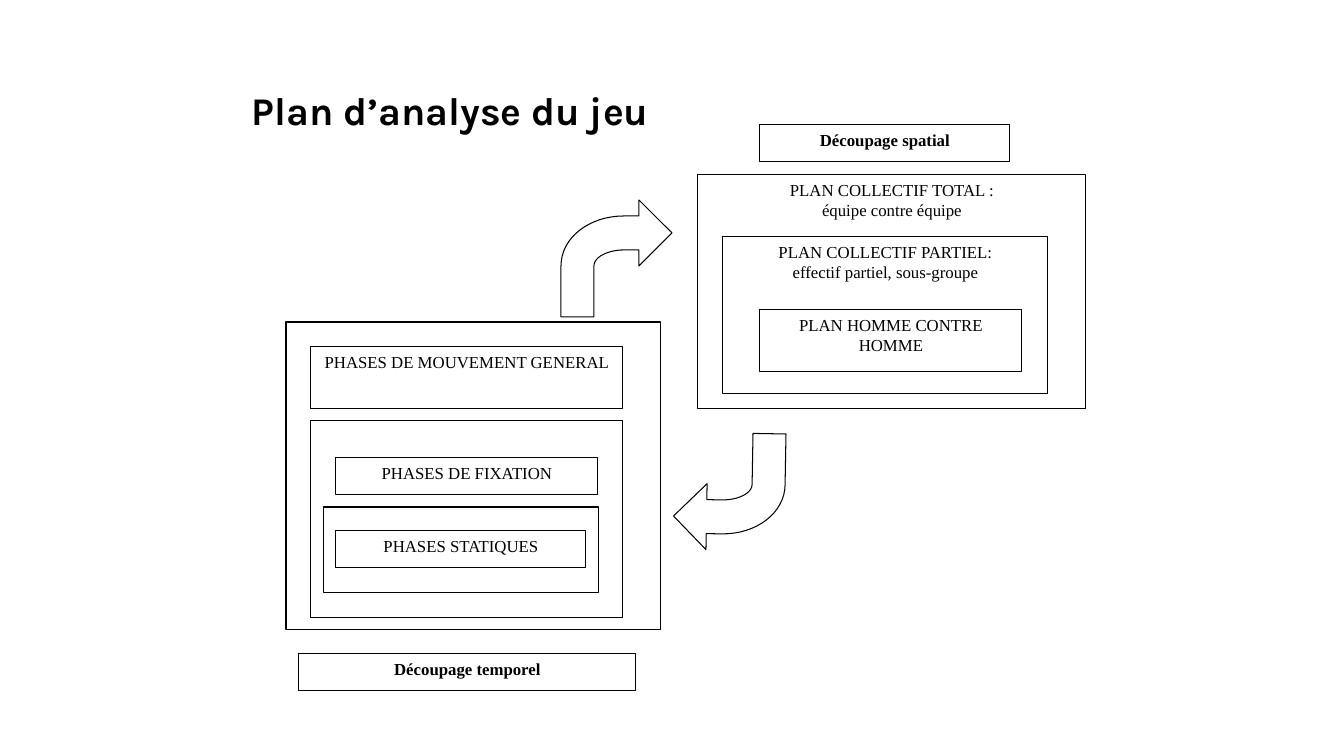
import pptx
import pptx.dml.color
import pptx.enum.shapes
import pptx.enum.text
import pptx.util

BLACK = pptx.dml.color.RGBColor(0, 0, 0)
WHITE = pptx.dml.color.RGBColor(255, 255, 255)
PX = 914400 / 100.8
CURVE_STEPS = 16


def emu(px):
    return pptx.util.Emu(round(px * PX))


def curve(start, control1, control2, end):
    """Points along a cubic Bezier curve, both ends included."""
    points = []
    for step in range(CURVE_STEPS + 1):
        t = step / CURVE_STEPS
        u = 1 - t
        points.append(tuple(
            u**3 * a + 3 * u * u * t * b + 3 * u * t * t * c + t**3 * d
            for a, b, c, d in zip(start, control1, control2, end)))
    return points


BENT_ARROW = [
    (111, 33), (78, 0), (78, 16),
    *curve((63, 16), (28, 16), (0, 38), (0, 66)),
    (0, 117), (33, 117),
    *curve((33, 66), (33, 57), (47, 50), (63, 50)),
    (78, 50), (78, 66),
]


class Diagram:
    body_font = "Times New Roman"
    title_font = "Karla"
    body_size = 12
    title_size = 28
    line_width = 0.75

    def __init__(self, slide):
        self.slide = slide
        fill = slide.background.fill
        fill.solid()
        fill.fore_color.rgb = WHITE

    def outline(self, shape):
        shape.shadow.inherit = False
        shape.fill.background()
        shape.line.color.rgb = BLACK
        shape.line.width = pptx.util.Pt(self.line_width)

    def styled_run(self, paragraph, text, font, size, bold):
        run = paragraph.add_run()
        run.text = text
        run.font.name = font
        run.font.size = pptx.util.Pt(size)
        run.font.bold = bold
        run.font.color.rgb = BLACK

    def title(self, left, top, width, height, text):
        heading = self.slide.shapes.add_textbox(*map(emu, (left, top, width, height)))
        frame = heading.text_frame
        frame.word_wrap = True
        frame.auto_size = pptx.enum.text.MSO_AUTO_SIZE.SHAPE_TO_FIT_TEXT
        self.styled_run(frame.paragraphs[0], text, self.title_font, self.title_size, True)

    def box(self, left, top, width, height, *lines, bold=False):
        box = self.slide.shapes.add_shape(
            pptx.enum.shapes.MSO_SHAPE.RECTANGLE, *map(emu, (left, top, width, height)))
        self.outline(box)
        frame = box.text_frame
        frame.word_wrap = True
        frame.vertical_anchor = pptx.enum.text.MSO_ANCHOR.TOP
        for index, line in enumerate(lines):
            paragraph = frame.add_paragraph() if index else frame.paragraphs[0]
            paragraph.alignment = pptx.enum.text.PP_ALIGN.CENTER
            self.styled_run(paragraph, line, self.body_font, self.body_size, bold)

    def bent_arrow(self, left, top, rotation=0):
        start, *others = [(emu(x), emu(y)) for x, y in BENT_ARROW]
        builder = self.slide.shapes.build_freeform(*start)
        builder.add_line_segments(others, close=True)
        arrow = builder.convert_to_shape(emu(left), emu(top))
        arrow.rotation = rotation
        self.outline(arrow)


def main():
    deck = pptx.Presentation()
    deck.slide_width = emu(1344)
    deck.slide_height = emu(756)
    diagram = Diagram(deck.slides.add_slide(deck.slide_layouts[6]))

    diagram.bent_arrow(561, 200)
    diagram.bent_arrow(674, 433, rotation=181)

    # Spatial division
    diagram.box(698, 175, 388, 234, "PLAN COLLECTIF TOTAL :", "équipe contre équipe")
    diagram.box(723, 237, 325, 157, "PLAN COLLECTIF PARTIEL:", "effectif partiel, sous-groupe")
    diagram.box(760, 310, 262, 62, "PLAN HOMME CONTRE HOMME")
    diagram.box(760, 125, 250, 37, "Découpage spatial", bold=True)

    # Temporal division
    diagram.box(286, 322, 375, 308)
    diagram.box(311, 421, 312, 197)
    diagram.box(324, 507, 275, 86)
    diagram.box(336, 531, 250, 37, "PHASES STATIQUES")
    diagram.box(336, 458, 262, 37, "PHASES DE FIXATION")
    diagram.box(311, 347, 312, 62, "PHASES DE MOUVEMENT GENERAL")
    diagram.box(299, 654, 337, 37, "Découpage temporel", bold=True)

    diagram.title(242, 81, 457, 57, "Plan d’analyse du jeu")
    deck.save("out.pptx")


if __name__ == "__main__":
    main()
